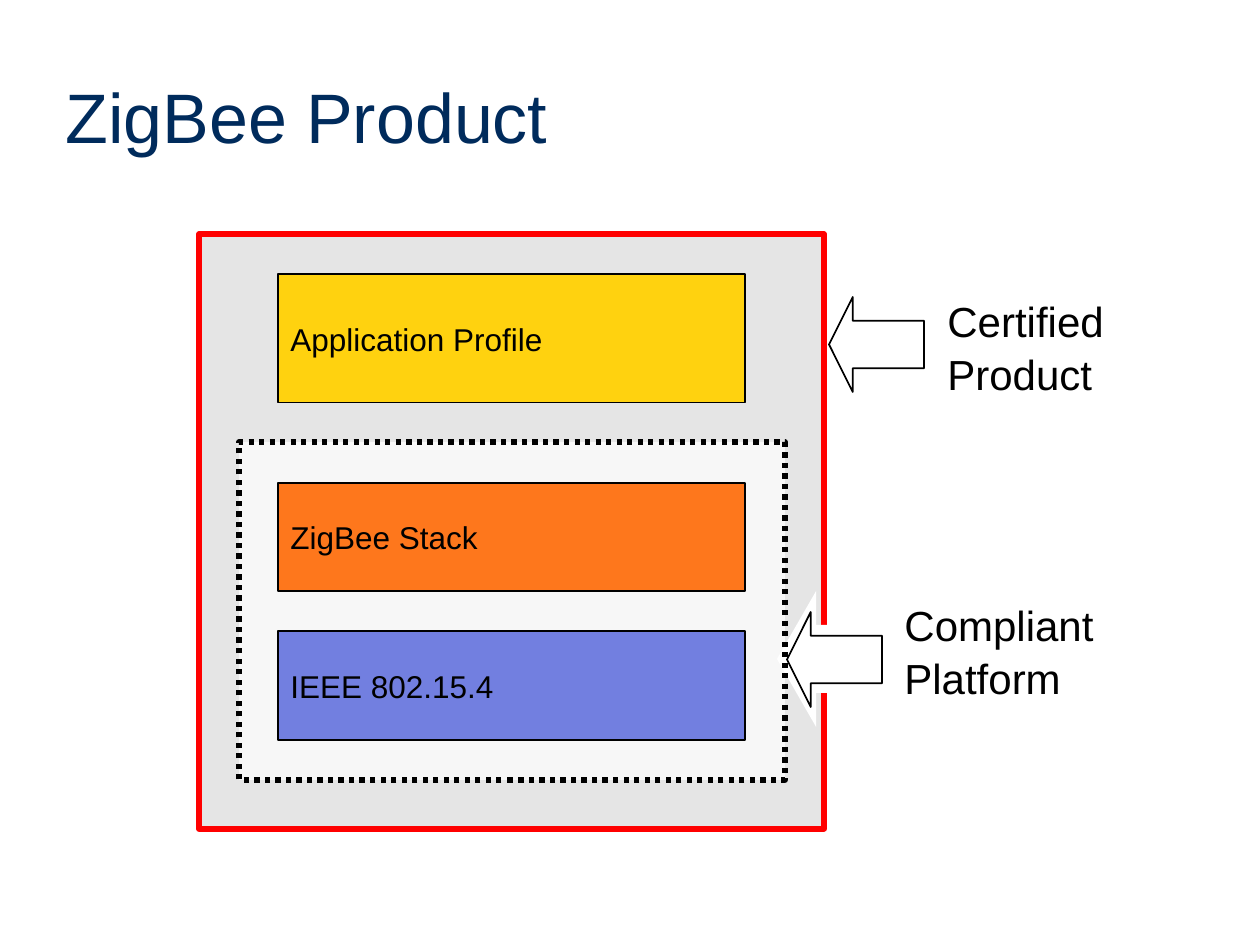
from pptx import Presentation, util as u
from pptx.dml.color import RGBColor
from pptx.enum import dml, shapes, text
from pptx.oxml.ns import qn
from lxml import etree

PX = 914400 / 126
RECT, ARROW = shapes.MSO_SHAPE.RECTANGLE, shapes.MSO_SHAPE.LEFT_ARROW


def add_block(kind, box, fill, alpha=100, line=None, width=1, dash=None):
    s = slide.shapes.add_shape(kind, *[round(v * PX) for v in box])
    s.shadow.inherit = False
    s.fill.solid()
    s.fill.fore_color.rgb = RGBColor.from_string(fill)
    if alpha < 100:
        color = s.fill._xPr.find(qn("a:solidFill"))[0]
        etree.SubElement(color, qn("a:alpha"), val=str(alpha * 1000))
    if line:
        s.line.color.rgb = RGBColor.from_string(line)
        s.line.width = u.Pt(width)
        if dash:
            s.line.dash_style = dash
    else:
        s.line.fill.background()
    return s


def set_text(s, words, size, color="000000", anchor=text.MSO_ANCHOR.MIDDLE, spacing=1.0):
    tf = s.text_frame
    tf.word_wrap = True
    tf.vertical_anchor = anchor
    p = tf.paragraphs[0]
    p.alignment = text.PP_ALIGN.LEFT
    p.line_spacing = spacing
    r = p.add_run()
    r.text = words
    r.font.name = "Arial"
    r.font.size = u.Pt(size)
    r.font.color.rgb = RGBColor.from_string(color)


prs = Presentation()
prs.slide_width, prs.slide_height = u.Inches(10), u.Inches(7.5)
slide = prs.slides.add_slide(prs.slide_layouts[6])

# Certified product, with the compliant platform inside it
add_block(RECT, (199, 234, 625, 595), "C0C0C0", alpha=40, line="FF0000", width=3)
halo = add_block(ARROW, (777, 591, 158, 136), "FFFFFF")
halo.adjustments[1] = 0.288
add_block(RECT, (239, 442, 546, 338), "FFFFFF", alpha=70, line="000000", width=3,
          dash=dml.MSO_LINE.ROUND_DOT)

for words, top, height, fill in [
    ("Application Profile", 274, 129, "FFD20F"),
    ("ZigBee Stack", 483, 108, "FE771C"),
    ("IEEE 802.15.4", 631, 109, "727FE0"),
]:
    s = add_block(RECT, (278, top, 467, height), fill, line="000000", width=0.75)
    set_text(s, words, 18)

# Labels with their arrows
for words, box, arrow_left, arrow_top, alpha in [
    ("Compliant Platform", (892, 591, 248, 113), 787, 612, 100),
    ("Certified Product", (935, 287, 208, 113), 829, 297, 50),
]:
    s = slide.shapes.add_textbox(*[round(v * PX) for v in box])
    set_text(s, words, 24, anchor=text.MSO_ANCHOR.TOP, spacing=1.05)
    s = add_block(ARROW, (arrow_left, arrow_top, 95, 95), "FFFFFF", alpha=alpha, line="000000")
    s.adjustments[1] = 0.25

title = slide.shapes.add_textbox(*[round(v * PX) for v in (53, 53, 1144, 126)])
set_text(title, "ZigBee Product", 40, color="002B5C")

prs.save("out.pptx")
